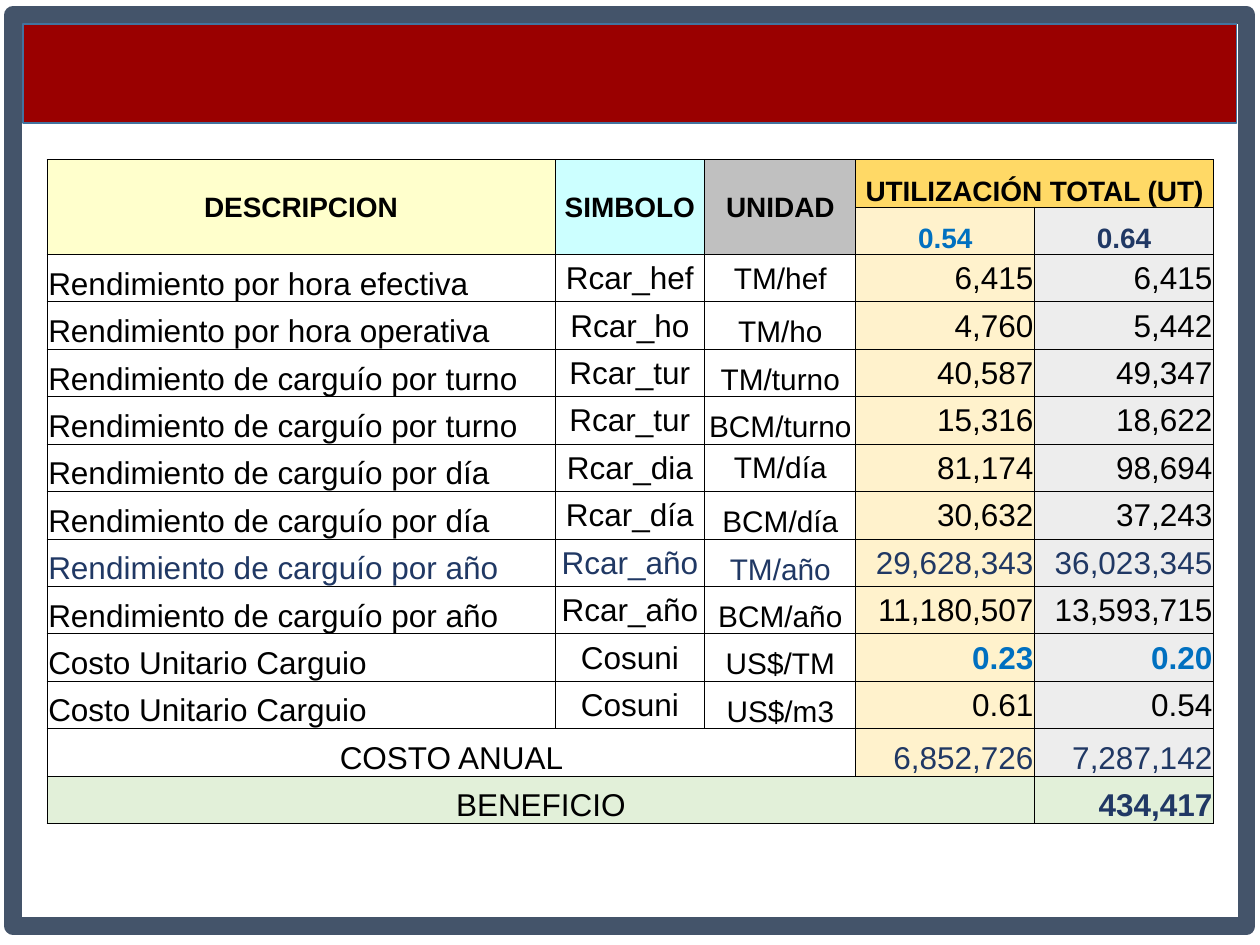
from dataclasses import dataclass

from lxml.etree import SubElement
from pptx import Presentation
from pptx.dml.color import RGBColor
from pptx.enum.shapes import MSO_SHAPE
from pptx.enum.text import MSO_ANCHOR, PP_ALIGN
from pptx.oxml.ns import qn
from pptx.util import Pt

BLACK, WHITE, NAVY, BLUE = "000000", "FFFFFF", "203864", "0070C0"
CREAM, GREY, GREEN = "FFF2CC", "EDEDED", "E2F0D9"
LEFT, CENTER, RIGHT = PP_ALIGN.LEFT, PP_ALIGN.CENTER, PP_ALIGN.RIGHT
MIDDLE, BOTTOM = MSO_ANCHOR.MIDDLE, MSO_ANCHOR.BOTTOM
COL_WIDTHS = (290.2, 85.7, 86.3, 102.2, 102.2)
ROW_HEIGHT = 27.1


@dataclass
class Cell:
    row: int
    col: int
    text: str
    fill: str = WHITE
    align: PP_ALIGN = CENTER
    anchor: MSO_ANCHOR = BOTTOM
    size: float = 18
    color: str = BLACK
    bold: bool = False
    rows: int = 1
    cols: int = 1


@dataclass
class Measure:
    name: str
    symbol: str
    unit: str
    current: str
    improved: str
    color: str = BLACK
    value_color: str = BLACK
    value_bold: bool = False
    unit_anchor: MSO_ANCHOR = BOTTOM


MEASURES = [
    Measure("Rendimiento por hora efectiva", "Rcar_hef", "TM/hef", "6,415", "6,415",
            unit_anchor=MIDDLE),
    Measure("Rendimiento por hora operativa", "Rcar_ho", "TM/ho", "4,760", "5,442"),
    Measure("Rendimiento de carguío por turno", "Rcar_tur", "TM/turno", "40,587", "49,347"),
    Measure("Rendimiento de carguío por turno", "Rcar_tur", "BCM/turno", "15,316", "18,622"),
    Measure("Rendimiento de carguío por día", "Rcar_dia", "TM/día", "81,174", "98,694",
            unit_anchor=MIDDLE),
    Measure("Rendimiento de carguío por día", "Rcar_día", "BCM/día", "30,632", "37,243"),
    Measure("Rendimiento de carguío por año", "Rcar_año", "TM/año", "29,628,343", "36,023,345",
            color=NAVY, value_color=NAVY),
    Measure("Rendimiento de carguío por año", "Rcar_año", "BCM/año", "11,180,507", "13,593,715"),
    Measure("Costo Unitario Carguio", "Cosuni", "US$/TM", "0.23", "0.20",
            value_color=BLUE, value_bold=True),
    Measure("Costo Unitario Carguio", "Cosuni", "US$/m3", "0.61", "0.54"),
]

HEADERS = [
    Cell(0, 0, "DESCRIPCION", "FFFFCC", anchor=MIDDLE, size=16, bold=True, rows=2),
    Cell(0, 1, "SIMBOLO", "CCFFFF", anchor=MIDDLE, size=16, bold=True, rows=2),
    Cell(0, 2, "UNIDAD", "C0C0C0", anchor=MIDDLE, size=16, bold=True, rows=2),
    Cell(0, 3, "UTILIZACIÓN TOTAL (UT)", "FFD966", size=16, bold=True, cols=2),
    Cell(1, 3, "0.54", CREAM, size=16, color=BLUE, bold=True),
    Cell(1, 4, "0.64", GREY, size=16, color=NAVY, bold=True),
]

TOTALS = [
    Cell(12, 0, "COSTO ANUAL", cols=3),
    Cell(12, 3, "6,852,726", CREAM, RIGHT, color=NAVY),
    Cell(12, 4, "7,287,142", GREY, RIGHT, color=NAVY),
    Cell(13, 0, "BENEFICIO", GREEN, cols=4),
    Cell(13, 4, "434,417", GREEN, RIGHT, color=NAVY, bold=True),
]


def rgb(value: str) -> RGBColor:
    return RGBColor.from_string(value)


def measure_cells(row: int, m: Measure) -> list[Cell]:
    value = dict(align=RIGHT, anchor=MIDDLE, color=m.value_color, bold=m.value_bold)
    return [
        Cell(row, 0, m.name, align=LEFT, color=m.color),
        Cell(row, 1, m.symbol, anchor=MIDDLE, color=m.color),
        Cell(row, 2, m.unit, anchor=m.unit_anchor, size=17, color=m.color),
        Cell(row, 3, m.current, CREAM, **value),
        Cell(row, 4, m.improved, GREY, **value),
    ]


def add_rect(s, left: float, top: float, width: float, height: float,
             line: str, weight: float, fill: str | None = None) -> None:
    sp = s.shapes.add_shape(MSO_SHAPE.RECTANGLE, Pt(left), Pt(top), Pt(width), Pt(height))
    sp.shadow.inherit = False
    if fill:
        sp.fill.solid()
        sp.fill.fore_color.rgb = rgb(fill)
    else:
        sp.fill.background()
    sp.line.color.rgb = rgb(line)
    sp.line.width = Pt(weight)


def add_borders(cell, color: str, weight: float) -> None:
    tc_pr = cell._tc.get_or_add_tcPr()
    for side in ("a:lnL", "a:lnR", "a:lnT", "a:lnB"):
        ln = SubElement(tc_pr, qn(side), w=str(Pt(weight)))
        SubElement(SubElement(ln, qn("a:solidFill")), qn("a:srgbClr"), val=color)


def draw_cell(table, c: Cell) -> None:
    for row in range(c.row, c.row + c.rows):
        for col in range(c.col, c.col + c.cols):
            part = table.cell(row, col)
            add_borders(part, BLACK, 0.5)
            part.fill.solid()
            part.fill.fore_color.rgb = rgb(c.fill)
    cell = table.cell(c.row, c.col)
    if c.rows * c.cols > 1:
        cell.merge(table.cell(c.row + c.rows - 1, c.col + c.cols - 1))
    cell.margin_left = cell.margin_right = cell.margin_top = Pt(0.7)
    cell.margin_bottom = Pt(0)
    cell.vertical_anchor = c.anchor
    p = cell.text_frame.paragraphs[0]
    p.text = c.text
    p.alignment = c.align
    p.font.name = "Arial"
    p.font.size = Pt(c.size)
    p.font.bold = c.bold
    p.font.color.rgb = rgb(c.color)


def add_table(s, left: float, top: float, cells: list[Cell]) -> None:
    n_rows = max(c.row for c in cells) + 1
    table = s.shapes.add_table(n_rows, len(COL_WIDTHS), Pt(left), Pt(top),
                               Pt(sum(COL_WIDTHS)), Pt(n_rows * ROW_HEIGHT)).table
    table.first_row = table.horz_banding = False
    for column, width in zip(table.columns, COL_WIDTHS):
        column.width = Pt(width)
    for row in table.rows:
        row.height = Pt(ROW_HEIGHT)
    for c in cells:
        draw_cell(table, c)


def main() -> None:
    prs = Presentation()
    prs.slide_width, prs.slide_height = Pt(720), Pt(540)
    s = prs.slides.add_slide(prs.slide_layouts[6])
    s.background.fill.solid()
    s.background.fill.fore_color.rgb = rgb(WHITE)
    add_rect(s, 7.4, 8.6, 705, 520.5, "44546A", 10)
    add_rect(s, 13, 13.8, 693.6, 56.5, "43739E", 1, "9A0000")
    body = [c for row, m in enumerate(MEASURES, 2) for c in measure_cells(row, m)]
    add_table(s, 26.9, 91.2, HEADERS + body + TOTALS)
    prs.save("out.pptx")


if __name__ == "__main__":
    main()
